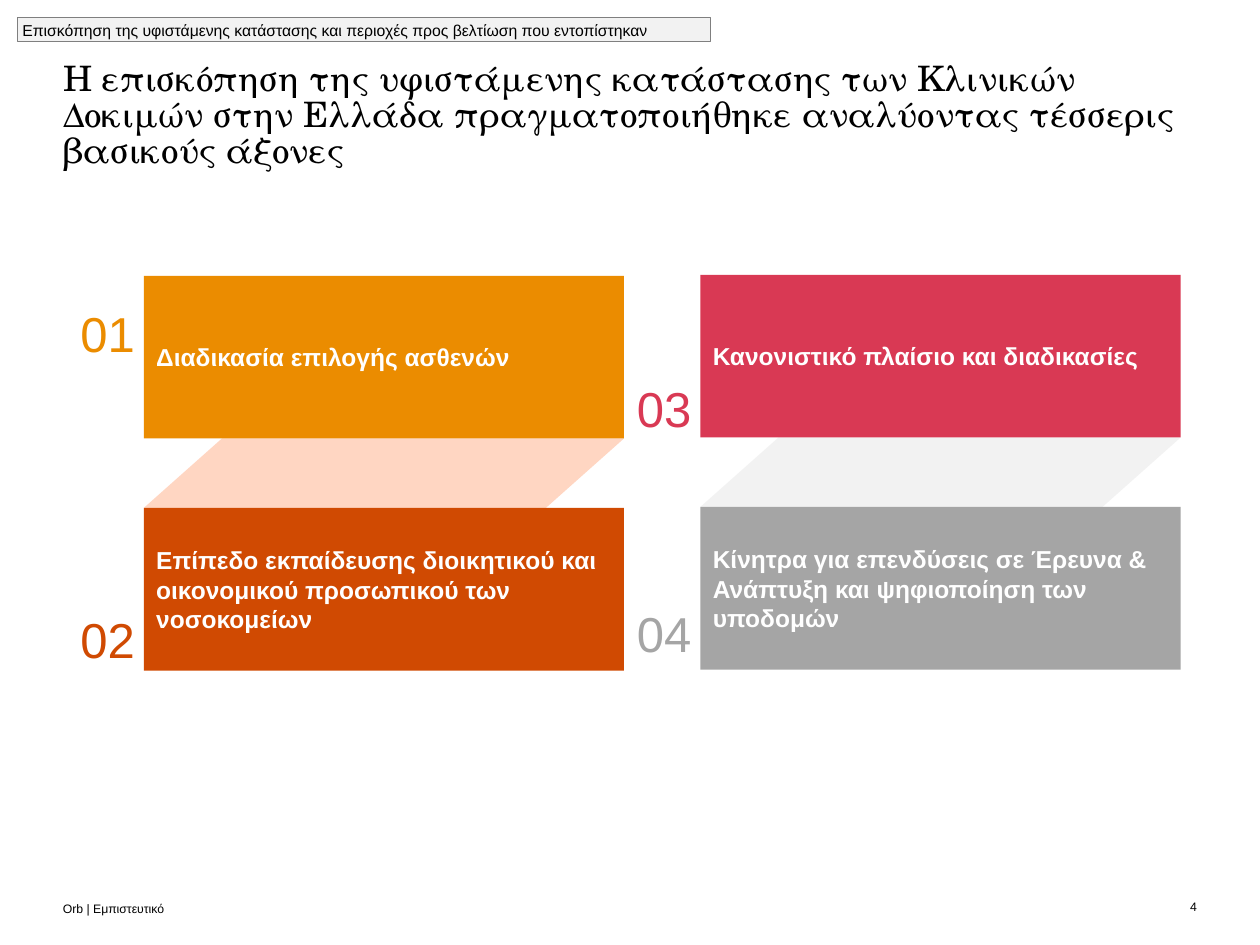
from pptx import Presentation
from pptx.dml.color import RGBColor
from pptx.enum.shapes import MSO_SHAPE
from pptx.enum.text import MSO_ANCHOR, MSO_AUTO_SIZE, PP_ALIGN
from pptx.util import Cm, Pt

RECTANGLE, PARALLELOGRAM = MSO_SHAPE.RECTANGLE, MSO_SHAPE.PARALLELOGRAM
TOP, MIDDLE, BOTTOM = MSO_ANCHOR.TOP, MSO_ANCHOR.MIDDLE, MSO_ANCHOR.BOTTOM
LEFT, RIGHT = PP_ALIGN.LEFT, PP_ALIGN.RIGHT
NO_AUTOFIT = MSO_AUTO_SIZE.NONE

COLORS = {
    "black": "000000", "white": "FFFFFF", "orange": "EB8C00",
    "rust": "D04A02", "rose": "D93954", "gray": "A5A5A5",
    "peach": "FFD6C2", "light": "F2F2F2", "border": "7F7F7F",
}
TITLE = ("Η επισκόπηση της υφιστάμενης κατάστασης των Κλινικών Δοκιμών στην "
         "Ελλάδα πραγματοποιήθηκε αναλύοντας τέσσερις βασικούς άξονες")
SECTION = ("Επισκόπηση της υφιστάμενης κατάστασης και περιοχές προς βελτίωση "
           "που εντοπίστηκαν")
FOOTER = "Orb | Εμπιστευτικό"
PAGE_NUMBER = "4"

# Each column: left, top, band color, axes as (number, number top, color, text)
COLUMNS = [
    (2.9, 5.56, "peach", [
        ("01", 6.12, "orange", "Διαδικασία επιλογής ασθενών"),
        ("02", 12.29, "rust", "Επίπεδο εκπαίδευσης διοικητικού και "
         "οικονομικού προσωπικού των νοσοκομείων"),
    ]),
    (14.12, 5.54, "light", [
        ("03", 7.62, "rose", "Κανονιστικό πλαίσιο και διαδικασίες"),
        ("04", 12.17, "gray", "Κίνητρα για επενδύσεις σε Έρευνα & Ανάπτυξη "
         "και ψηφιοποίηση των υποδομών"),
    ]),
]
CARD_WIDTH, CARD_HEIGHT, CARD_GAP = 9.68, 3.28, 1.4
NUMBER_OFFSET, NUMBER_WIDTH, NUMBER_HEIGHT = 1.28, 1.22, 1.19


def rgb(name):
    return RGBColor.from_string(COLORS[name])


def write(box, text, size, color="black", font="Arial", bold=False,
          align=LEFT, anchor=MIDDLE, insets=(0, 0, 0, 0), spacing=None):
    frame = box.text_frame
    frame.word_wrap = True
    frame.auto_size = NO_AUTOFIT
    frame.vertical_anchor = anchor
    (frame.margin_left, frame.margin_top,
     frame.margin_right, frame.margin_bottom) = [Cm(inset) for inset in insets]
    para = frame.paragraphs[0]
    para.alignment = align
    para.line_spacing = spacing
    span = para.add_run()
    span.text = text
    span.font.name = font
    span.font.size = Pt(size)
    span.font.bold = bold
    span.font.color.rgb = rgb(color)


def add_text(page, text, place, size, **style):
    box = page.shapes.add_textbox(*[Cm(length) for length in place])
    write(box, text, size, **style)


def add_block(page, kind, place, fill, line=None):
    block = page.shapes.add_shape(kind, *[Cm(length) for length in place])
    block.shadow.inherit = False
    block.fill.solid()
    block.fill.fore_color.rgb = rgb(fill)
    if line:
        block.line.color.rgb = rgb(line)
        block.line.width = Pt(0.75)
    else:
        block.line.fill.background()
    return block


def add_column(page, left, top, band_color, axes):
    band = add_block(page, PARALLELOGRAM,
                     (left, top + CARD_HEIGHT, CARD_WIDTH, CARD_GAP), band_color)
    band.adjustments[0] = 1.125
    for row, (number, number_top, color, text) in enumerate(axes):
        card_top = top + row * (CARD_HEIGHT + CARD_GAP)
        card = add_block(page, RECTANGLE,
                         (left, card_top, CARD_WIDTH, CARD_HEIGHT), color)
        write(card, text, 14, color="white", bold=True,
              insets=(0.25, 0.18, 0.25, 0.18))
        add_text(page, number,
                 (left - NUMBER_OFFSET, number_top, NUMBER_WIDTH, NUMBER_HEIGHT),
                 28, color=color, anchor=BOTTOM)


def main():
    deck = Presentation()
    deck.slide_width, deck.slide_height = Cm(25.4), Cm(19.05)
    page = deck.slides.add_slide(deck.slide_layouts[5])

    title = page.shapes.title
    title.left, title.top = Cm(1.27), Cm(1.27)
    title.width, title.height = Cm(23.37), Cm(1.75)
    write(title, TITLE, 20, font="TeX Gyre Schola", anchor=TOP, spacing=0.85)

    for column in COLUMNS:
        add_column(page, *column)

    section = add_block(page, RECTANGLE, (0.36, 0.36, 13.97, 0.48),
                        "light", line="border")
    write(section, SECTION, 9, insets=(0.09, 0, 0, 0))
    add_text(page, FOOTER, (1.27, 18.08, 11.05, 0.38), 7, anchor=BOTTOM)
    add_text(page, PAGE_NUMBER, (23.6, 18.08, 0.53, 0.38), 7, align=RIGHT)

    deck.save("out.pptx")


if __name__ == "__main__":
    main()
